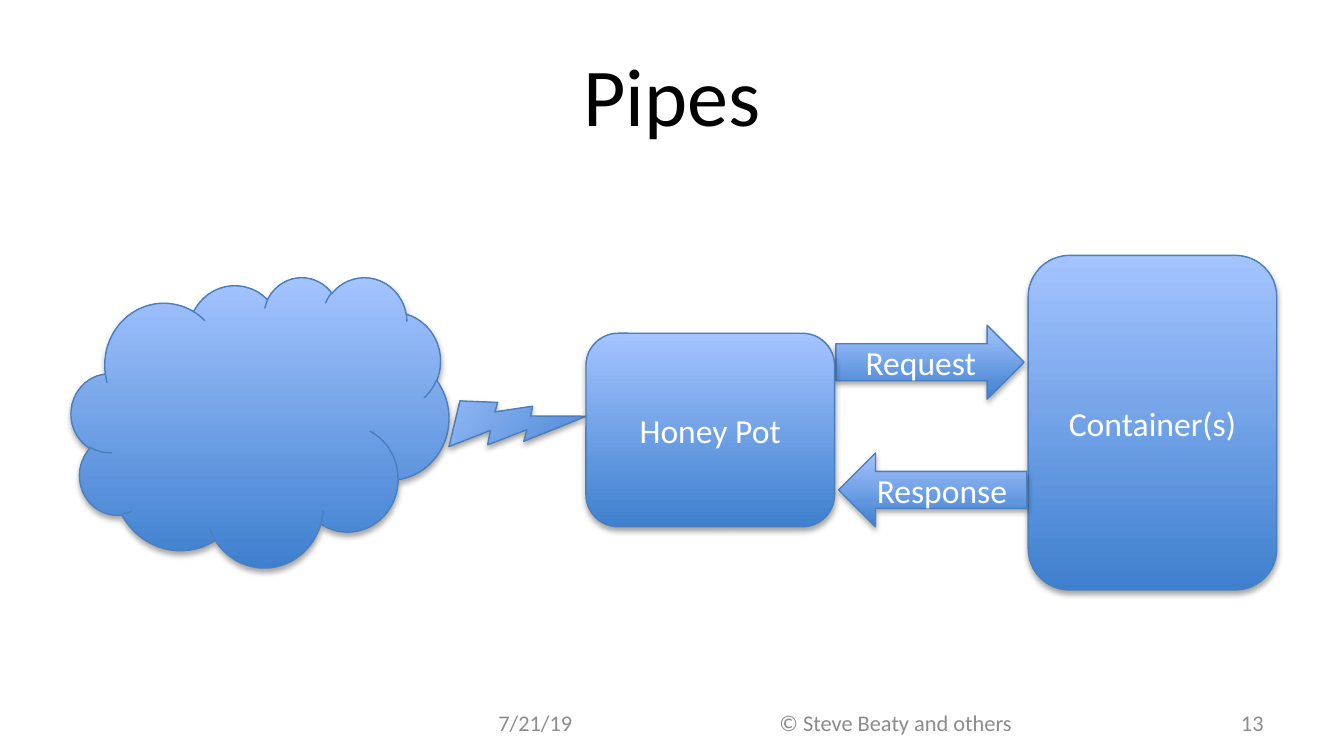
from lxml import etree
from pptx import Presentation
from pptx.dml.color import RGBColor
from pptx.enum import shapes, text
from pptx.oxml import ns
from pptx.util import Inches, Pt

COLORS = {
    "title": "000000", "footer": "8C8C8C", "label": "FFFFFF", "line": "4B7EBC",
    "dark": "3F80CE", "light": "A4C4FF", "shadow": "000000",
}
FONT = "Calibri"
LEFT, CENTER, RIGHT = text.PP_ALIGN.LEFT, text.PP_ALIGN.CENTER, text.PP_ALIGN.RIGHT
KIND = shapes.MSO_SHAPE

# wording, (left, top, width, height), size, colour, alignment
TEXTS = [
    ("Pipes", (0.5, 0.23, 9, 0.94), 44, "title", CENTER),
    ("7/21/19", (3.61, 5.18, 0.96, 0.4), 12, "footer", LEFT),
    ("© Steve Beaty and others", (4.86, 5.18, 3.61, 0.4), 12, "footer", CENTER),
    ("13", (8.78, 5.18, 0.72, 0.4), 12, "footer", RIGHT),
]
# kind, (left, top, width, height), rotation, label; back to front
NODES = [
    (KIND.ROUNDED_RECTANGLE, (7.65, 1.9, 1.85, 2.49), 0, "Container(s)"),
    (KIND.CLOUD, (0.53, 2.06, 2.81, 2.16), 0, ""),
    (KIND.LIGHTNING_BOLT, (3.39, 2.76, 0.81, 0.81), 308.2, ""),
    (KIND.RIGHT_ARROW, (6.22, 2.42, 1.4, 0.55), 0, "Request"),
    (KIND.LEFT_ARROW, (6.24, 3.37, 1.4, 0.55), 0, "Response"),
    (KIND.ROUNDED_RECTANGLE, (4.36, 2.48, 1.85, 1.44), 0, "Honey Pot"),
]


def rgb(name):
    return RGBColor.from_string(COLORS[name])


def write(shape, wording, size, color, alignment):
    frame = shape.text_frame
    frame.word_wrap = True
    frame.vertical_anchor = text.MSO_ANCHOR.MIDDLE
    paragraph = frame.paragraphs[0]
    paragraph.alignment = alignment
    run = paragraph.add_run()
    run.text = wording
    for name, value in {"name": FONT, "size": Pt(size)}.items():
        setattr(run.font, name, value)
    run.font.color.rgb = rgb(color)


def add_shadow(shape):
    """Give the shape a soft shadow straight below it."""
    shape.shadow.inherit = False
    effects = shape._element.spPr.find(ns.qn("a:effectLst"))
    shadow = etree.SubElement(
        effects, ns.qn("a:outerShdw"), blurRad=str(Pt(3.1)), dist=str(Pt(1.8)),
        dir=str(90 * 60000), rotWithShape="0")
    color = etree.SubElement(shadow, ns.qn("a:srgbClr"), val=COLORS["shadow"])
    etree.SubElement(color, ns.qn("a:alpha"), val="35000")


def add_node(slide, kind, box, rotation, label):
    shape = slide.shapes.add_shape(kind, *map(Inches, box))
    shape.rotation = rotation
    shape.fill.gradient()
    shape.fill.gradient_angle = 90
    for stop, color in zip(shape.fill.gradient_stops, ("dark", "light")):
        stop.color.rgb = rgb(color)
    shape.line.color.rgb = rgb("line")
    shape.line.width = Pt(0.75)
    add_shadow(shape)
    if label:
        write(shape, label, 18, "label", CENTER)


def main():
    presentation = Presentation()
    presentation.slide_width = Inches(10)
    presentation.slide_height = Inches(10) * 9 // 16
    slide = presentation.slides.add_slide(presentation.slide_layouts[6])
    for wording, box, size, color, alignment in TEXTS:
        write(slide.shapes.add_textbox(*map(Inches, box)), wording, size, color, alignment)
    for node in NODES:
        add_node(slide, *node)
    presentation.save("out.pptx")


if __name__ == "__main__":
    main()
